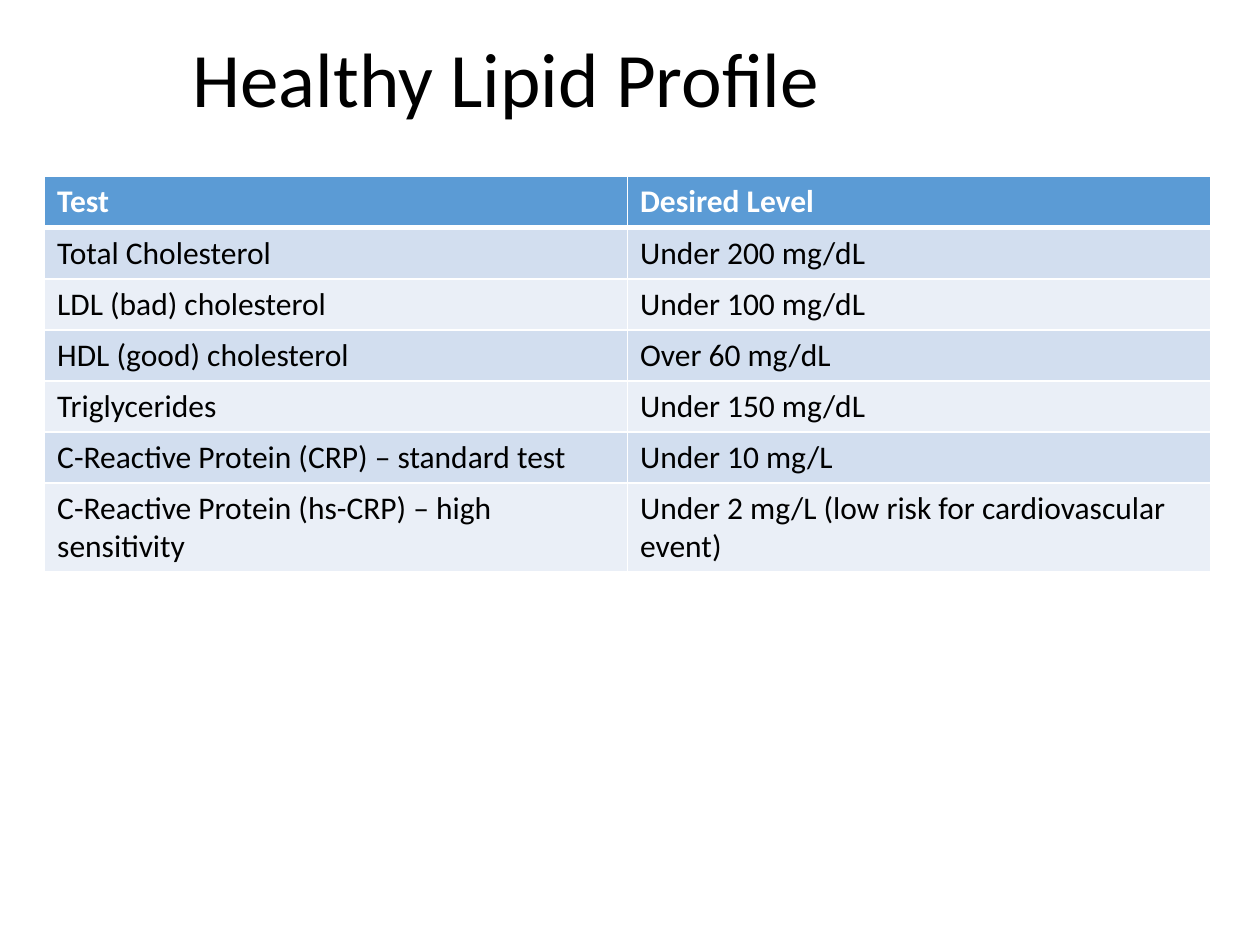
from lxml.etree import SubElement
from pptx import Presentation
from pptx.dml.color import RGBColor
from pptx.enum.text import MSO_ANCHOR
from pptx.oxml.ns import qn
from pptx.util import Cm, Pt

FONT = "Calibri"
BLACK = RGBColor(0x00, 0x00, 0x00)
WHITE = RGBColor(0xFF, 0xFF, 0xFF)
HEADER = RGBColor(0x5B, 0x9B, 0xD5)
BANDS = [RGBColor(0xEA, 0xEF, 0xF7), RGBColor(0xD2, 0xDE, 0xEF)]

LIPID_TESTS = [
    ("Test", "Desired Level"),
    ("Total Cholesterol", "Under 200 mg/dL"),
    ("LDL (bad) cholesterol", "Under 100 mg/dL"),
    ("HDL (good) cholesterol", "Over 60 mg/dL"),
    ("Triglycerides", "Under 150 mg/dL"),
    ("C-Reactive Protein (CRP) – standard test", "Under 10 mg/L"),
    ("C-Reactive Protein (hs-CRP) – high sensitivity",
     "Under 2 mg/L (low risk for cardiovascular event)"),
]


def add_run(p, text, size, color, bold=False):
    """Add one styled run to a paragraph."""
    r = p.add_run()
    r.text = text
    r.font.name = FONT
    r.font.size = Pt(size)
    r.font.bold = bold
    r.font.color.rgb = color


def set_borders(cell, bottom, top):
    """Draw white borders around a cell, with top and bottom widths in points."""
    tcPr = cell._tc.get_or_add_tcPr()
    for side, width in (("L", 1), ("R", 1), ("T", top), ("B", bottom)):
        ln = SubElement(tcPr, qn(f"a:ln{side}"), w=str(Pt(width)))
        fill = SubElement(ln, qn("a:solidFill"))
        SubElement(fill, qn("a:srgbClr"), val=str(WHITE))


def add_title(s, text, left, top, width, height):
    """Place the slide title in its box."""
    tf = s.shapes.add_textbox(left, top, width, height).text_frame
    tf.word_wrap = True
    tf.vertical_anchor = MSO_ANCHOR.MIDDLE
    p = tf.paragraphs[0]
    p.line_spacing = 0.9
    add_run(p, text, 44, BLACK)


def add_lipid_table(s, rows, left, top, width, row_height):
    """Place the banded table with a header row and equal columns."""
    table = s.shapes.add_table(
        len(rows), len(rows[0]), left, top, width, row_height * len(rows)).table
    for i, values in enumerate(rows):
        is_header = i == 0
        for j, text in enumerate(values):
            cell = table.cell(i, j)
            set_borders(cell, bottom=3 if is_header else 1, top=3 if i == 1 else 1)
            cell.fill.solid()
            cell.fill.fore_color.rgb = HEADER if is_header else BANDS[i % 2]
            add_run(cell.text_frame.paragraphs[0], text, 18,
                    WHITE if is_header else BLACK, is_header)


def main():
    """Build and save the slide."""
    prs = Presentation()
    prs.slide_width, prs.slide_height = Cm(25.4), Cm(19.05)
    s = prs.slides.add_slide(prs.slide_layouts[6])
    add_title(s, "Healthy Lipid Profile", Cm(3.63), Cm(0.6), Cm(20.05), Cm(2.15))
    add_lipid_table(s, LIPID_TESTS, Cm(0.9), Cm(3.56), Cm(23.5), Cm(1.03))
    prs.save("out.pptx")


if __name__ == "__main__":
    main()
